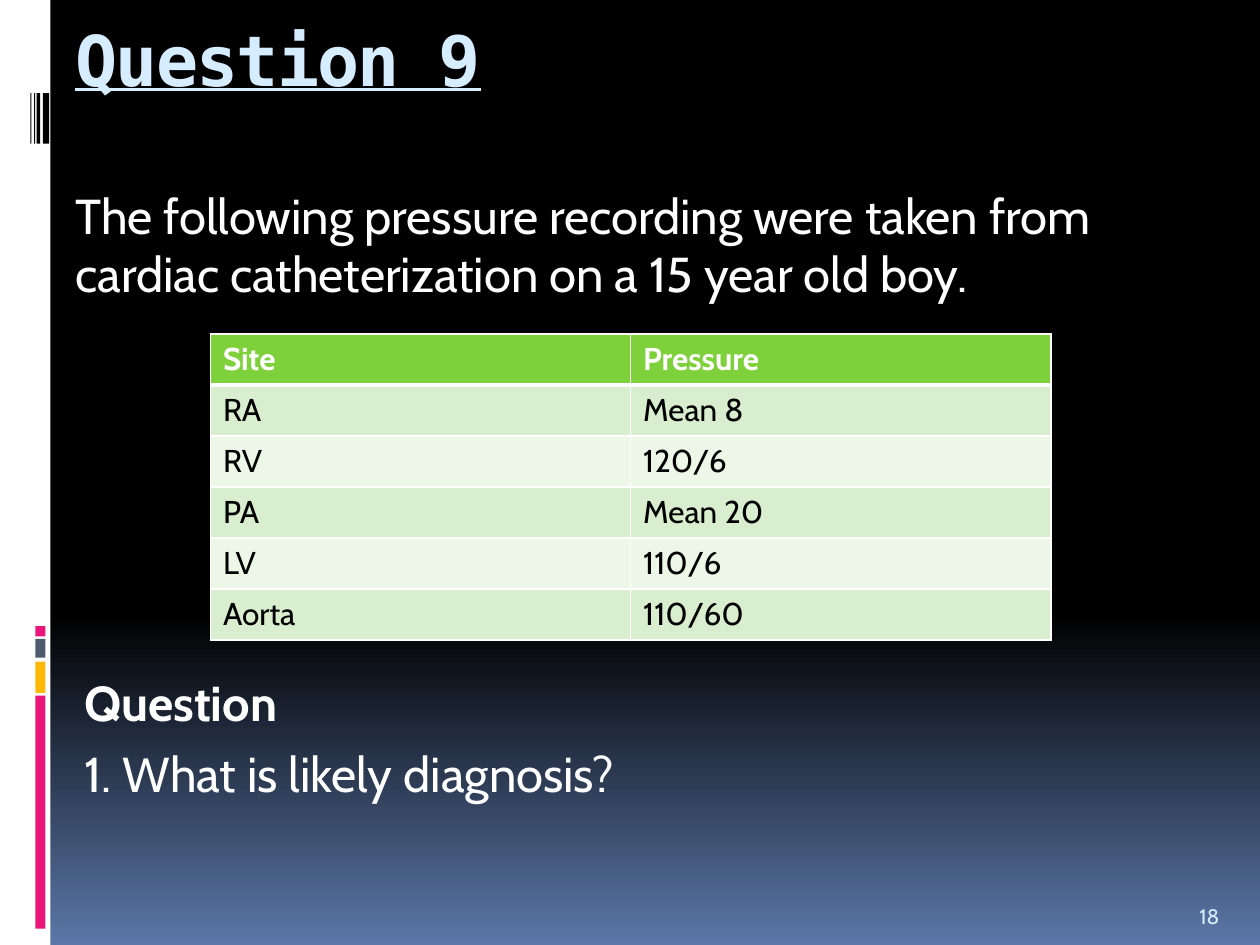
from lxml import etree
from pptx import Presentation
from pptx.dml.color import RGBColor
from pptx.enum.shapes import MSO_SHAPE
from pptx.enum.text import MSO_ANCHOR
from pptx.oxml.ns import qn
from pptx.util import Inches, Pt

WHITE = RGBColor(0xFF, 0xFF, 0xFF)
BLACK = RGBColor(0x00, 0x00, 0x00)
BLUE = RGBColor(0x5B, 0x77, 0xA8)
PALE_BLUE = RGBColor(0xD6, 0xEC, 0xFF)
PINK = RGBColor(0xEA, 0x15, 0x7A)
AMBER = RGBColor(0xFE, 0xB8, 0x0A)
SLATE = RGBColor(0x4E, 0x5B, 0x6F)
GREEN = RGBColor(0x7F, 0xD1, 0x3B)
BAND_DARK = RGBColor(0xD8, 0xEE, 0xCE)
BAND_LIGHT = RGBColor(0xEC, 0xF7, 0xE8)


def write(para, text, color, **formats):
    """Add one formatted run to a paragraph."""
    span = para.add_run()
    span.text = text
    span.font.color.rgb = color
    for name, value in formats.items():
        setattr(span.font, name, value)
    return span


def add_box(left, top, width, height):
    """Add a wrapping text box and return its text frame."""
    frame = page.shapes.add_textbox(
        Inches(left), Inches(top), Inches(width), Inches(height)).text_frame
    frame.word_wrap = True
    return frame


deck = Presentation()
deck.slide_width, deck.slide_height = Inches(10), Inches(7.5)
page = deck.slides.add_slide(deck.slide_layouts[6])

# Background: black, fading to blue at the bottom
background = page.background.fill
background.gradient()
background.gradient_angle = 270
for stop, position, color in zip(background.gradient_stops, (0.65, 1), (BLACK, BLUE)):
    stop.position = position
    stop.color.rgb = color

# Side strip, coloured blocks and thin black bars
strip_parts = [
    (0, 0, 0.4, 7.5, WHITE),
    (0.28, 5.52, 0.08, 1.85, PINK),
    (0.28, 5.25, 0.08, 0.25, AMBER),
    (0.28, 5.07, 0.08, 0.15, SLATE),
    (0.28, 4.97, 0.08, 0.08, PINK),
    (0.34, 0.74, 0.05, 0.4, BLACK),
    (0.29, 0.74, 0.03, 0.4, BLACK),
    (0.27, 0.74, 0.01, 0.4, BLACK),
    (0.24, 0.74, 0.01, 0.4, BLACK),
]
for left, top, width, height, color in strip_parts:
    part = page.shapes.add_shape(
        MSO_SHAPE.RECTANGLE, Inches(left), Inches(top), Inches(width), Inches(height))
    part.shadow.inherit = False
    part.fill.solid()
    part.fill.fore_color.rgb = color
    part.line.fill.background()

# Title
title = add_box(0.5, 0.08, 9, 1.25)
heading = write(title.paragraphs[0], "Question 9", PALE_BLUE, name="DejaVu Sans Mono",
                size=Pt(40), bold=True, underline=True)
heading.font._element.set("spc", "-100")

# Introduction above the table
body_format = {"name": "Cabin", "size": Pt(28)}
intro = add_box(0.5, 1.42, 9, 1.1)
write(intro.paragraphs[0],
      "The following pressure recording were taken from "
      "cardiac catheterization on a 15 year old boy.", WHITE, **body_format)

# Question below the table
question = add_box(0.57, 5.29, 8.93, 1.8)
write(question.paragraphs[0], "Question", WHITE, bold=True, **body_format)
para = question.add_paragraph()
para.space_before = Pt(7)
write(para, "1. What is likely diagnosis?", WHITE, **body_format)

# Slide number
number = add_box(9.42, 7.02, 0.5, 0.4)
number.vertical_anchor = MSO_ANCHOR.BOTTOM
write(number.paragraphs[0], "18", PALE_BLUE, name="Cabin", size=Pt(12))

# Pressure table
rows = [
    ("Site", "Pressure"),
    ("RA", "Mean 8"),
    ("RV", "120/6"),
    ("PA", "Mean 20"),
    ("LV", "110/6"),
    ("Aorta", "110/60"),
]
table = page.shapes.add_table(len(rows), 2, Inches(1.67), Inches(2.65),
                              Inches(6.67), Inches(2.43)).table
for row_index, values in enumerate(rows):
    is_header = row_index == 0
    band = GREEN if is_header else (BAND_LIGHT, BAND_DARK)[row_index % 2]
    for column_index, value in enumerate(values):
        cell = table.cell(row_index, column_index)
        write(cell.text_frame.paragraphs[0], value, WHITE if is_header else BLACK,
              name="Cabin", size=Pt(18), bold=is_header)
        # Borders come before the fill in the cell properties
        properties = cell._tc.get_or_add_tcPr()
        for side in ("lnL", "lnR", "lnT", "lnB"):
            thick = (side == "lnB" and is_header) or (side == "lnT" and row_index == 1)
            border = etree.SubElement(properties, qn(f"a:{side}"), w=str(Pt(3 if thick else 1)))
            paint = etree.SubElement(border, qn("a:solidFill"))
            etree.SubElement(paint, qn("a:srgbClr"), val=str(WHITE))
        cell.fill.solid()
        cell.fill.fore_color.rgb = band

deck.save("out.pptx")
